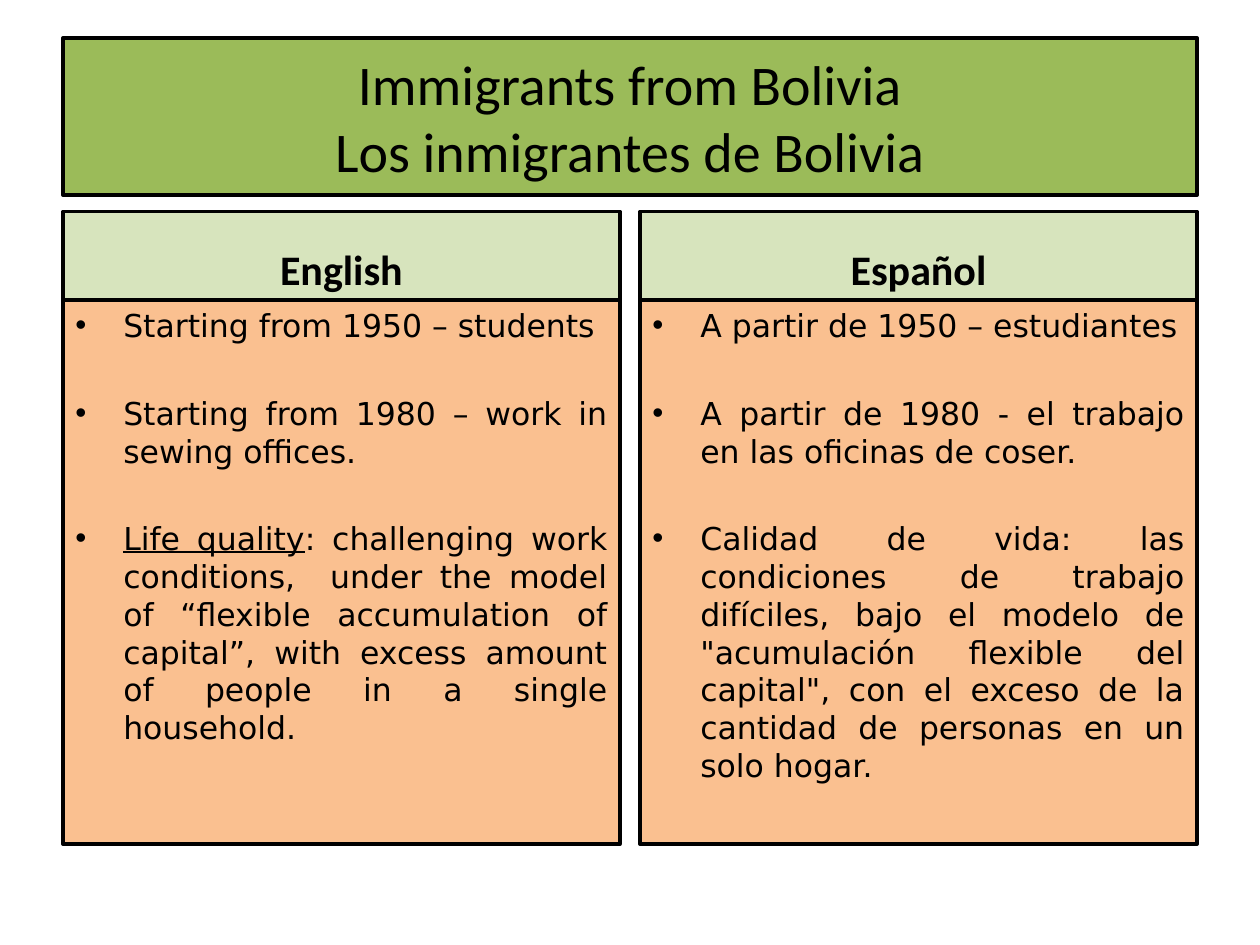
from dataclasses import dataclass

from lxml import etree
from pptx import Presentation
from pptx import util as u
from pptx.dml.color import RGBColor
from pptx.enum import shapes, text
from pptx.oxml.ns import qn


@dataclass(frozen=True)
class Theme:
    ink: str = "000000"
    title: str = "9BBB59"
    head: str = "D7E4BD"
    body: str = "FAC090"
    big: int = 32
    mid: int = 24
    small: int = 18
    sans: str = "Calibri"
    wide: str = "DejaVu Sans"


theme = Theme()


def frame(box, fill, anchor):
    """Give the box its fill and black outline; return its text frame."""
    box.fill.solid()
    box.fill.fore_color.rgb = RGBColor.from_string(fill)
    box.line.color.rgb = RGBColor.from_string(theme.ink)
    box.line.width = u.Pt(2)
    area = box.text_frame
    area.word_wrap = True
    area.auto_size = text.MSO_AUTO_SIZE.NONE
    area.vertical_anchor = anchor
    return area


def style(para, face, size, align):
    para.alignment = align
    para.font.name = face
    para.font.size = u.Pt(size)
    para.font.color.rgb = RGBColor.from_string(theme.ink)


deck = Presentation()
deck.slide_width, deck.slide_height = u.Inches(10), u.Inches(7.5)
slide = deck.slides.add_slide(deck.slide_layouts[5])

left, width, gap = 0.5, 9, 0.16
top, high, deep = 1.68, 0.7, 4.32
col = (width - gap) / 2

title = slide.shapes.title
title.left, title.top = u.Inches(left), u.Inches(0.3)
title.width, title.height = u.Inches(width), u.Inches(1.25)
para = frame(title, theme.title, text.MSO_ANCHOR.MIDDLE).paragraphs[0]
style(para, theme.sans, theme.big, text.PP_ALIGN.CENTER)
para.add_run().text = "Immigrants from Bolivia"
para.add_line_break()
para.add_run().text = "Los inmigrantes de Bolivia"

# Each point is a pair: underlined lead, plain rest
columns = [
    ("English", [
        ("", "Starting from 1950 – students"),
        ("", "Starting from 1980 – work in sewing offices."),
        ("Life quality", ": challenging work conditions,  under the model of "
         "“flexible accumulation of capital”, with excess amount of people "
         "in a single household."),
    ]),
    ("Español", [
        ("", "A partir de 1950 – estudiantes"),
        ("", "A partir de 1980 - el trabajo en las oficinas de coser."),
        ("", "Calidad de vida: las condiciones de trabajo difíciles, bajo el "
         'modelo de "acumulación flexible del capital", con el exceso de la '
         "cantidad de personas en un solo hogar."),
    ]),
]

for i, (name, points) in enumerate(columns):
    x = left + i * (col + gap)
    head, body = [
        slide.shapes.add_shape(shapes.MSO_SHAPE.RECTANGLE, u.Inches(x),
                               u.Inches(y), u.Inches(col), u.Inches(h))
        for y, h in ((top, high), (top + high, deep))
    ]
    head.shadow.inherit = body.shadow.inherit = False

    para = frame(head, theme.head, text.MSO_ANCHOR.BOTTOM).paragraphs[0]
    style(para, theme.sans, theme.mid, text.PP_ALIGN.CENTER)
    para.font.bold = True
    para.add_run().text = name

    area = frame(body, theme.body, text.MSO_ANCHOR.TOP)
    for n, (lead, rest) in enumerate(points):
        para = area.add_paragraph() if n else area.paragraphs[0]
        style(para, theme.wide, theme.small, text.PP_ALIGN.JUSTIFY)
        para.space_after = u.Pt(28.5)
        props = para._p.get_or_add_pPr()
        props.set("marL", str(u.Inches(0.38)))
        props.set("indent", str(u.Inches(-0.38)))
        font = etree.Element(qn("a:buFont"), typeface="Arial")
        mark = etree.Element(qn("a:buChar"), char="•")
        run = props.find(qn("a:defRPr"))
        run.addprevious(font)
        run.addprevious(mark)
        if lead:
            start = para.add_run()
            start.text = lead
            start.font.underline = True
        para.add_run().text = rest

deck.save("out.pptx")
